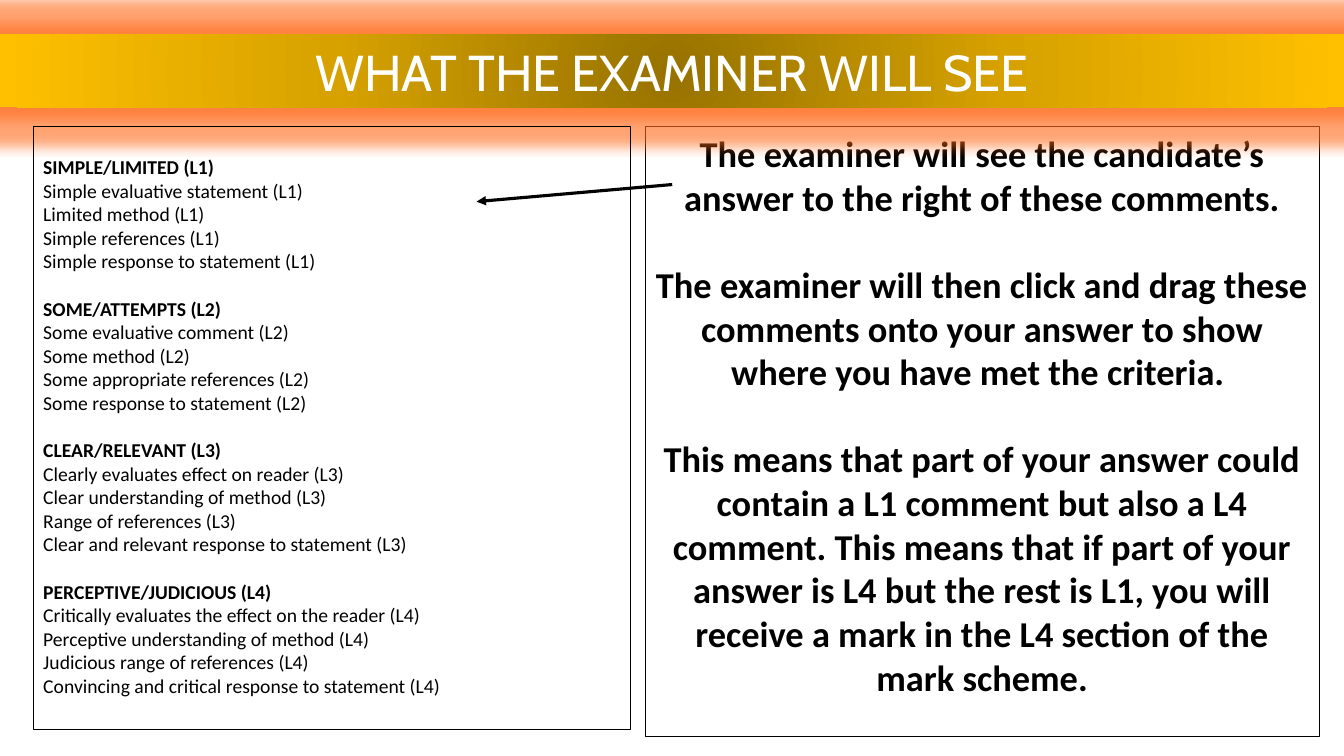
from dataclasses import dataclass

from pptx import Presentation
from pptx.dml.color import RGBColor
from pptx.enum.shapes import MSO_CONNECTOR, MSO_SHAPE
from pptx.enum.text import MSO_ANCHOR, PP_ALIGN
from pptx.oxml import parse_xml
from pptx.oxml.ns import nsdecls
from pptx.util import Cm, Pt

RECTANGLE = MSO_SHAPE.RECTANGLE
STRAIGHT = MSO_CONNECTOR.STRAIGHT
LEFT, CENTER = PP_ALIGN.LEFT, PP_ALIGN.CENTER
TOP, MIDDLE = MSO_ANCHOR.TOP, MSO_ANCHOR.MIDDLE

BLACK, WHITE = "000000", "FFFFFF"
GLOW = "FF6A1A"
BANNER_STOPS = ((0, "977200"), (50, "D7A200"), (100, "FFC000"))


@dataclass
class Line:
    text: str
    size: float
    font: str = "Calibri"
    color: str = BLACK
    bold: bool = False
    gap: float = 0


@dataclass
class Panel:
    left: float
    top: float
    width: float
    height: float
    lines: list[Line]
    align: PP_ALIGN
    anchor: MSO_ANCHOR = TOP
    inset_top: float = 0.13


@dataclass
class Level:
    heading: str
    code: str
    comments: list[str]


LEVELS = [
    Level("SIMPLE/LIMITED", "L1", [
        "Simple evaluative statement", "Limited method",
        "Simple references", "Simple response to statement"]),
    Level("SOME/ATTEMPTS", "L2", [
        "Some evaluative comment", "Some method",
        "Some appropriate references", "Some response to statement"]),
    Level("CLEAR/RELEVANT", "L3", [
        "Clearly evaluates effect on reader", "Clear understanding of method",
        "Range of references", "Clear and relevant response to statement"]),
    Level("PERCEPTIVE/JUDICIOUS", "L4", [
        "Critically evaluates the effect on the reader",
        "Perceptive understanding of method", "Judicious range of references",
        "Convincing and critical response to statement"]),
]

EXPLANATIONS = [
    "The examiner will see the candidate’s answer to the right of these comments.",
    "The examiner will then click and drag these comments onto your answer "
    "to show where you have met the criteria. ",
    "This means that part of your answer could contain a L1 comment but also "
    "a L4 comment. This means that if part of your answer is L4 but the rest "
    "is L1, you will receive a mark in the L4 section of the mark scheme.",
]


def rgb(color: str) -> RGBColor:
    return RGBColor.from_string(color)


def level_lines(level: Level, first: bool) -> list[Line]:
    heading = Line(f"{level.heading} ({level.code})", 14, bold=True,
                   gap=0 if first else 17)
    return [heading] + [Line(f"{comment} ({level.code})", 14)
                        for comment in level.comments]


def draw_panel(slide, panel: Panel):
    shape = slide.shapes.add_shape(
        RECTANGLE, Cm(panel.left), Cm(panel.top), Cm(panel.width), Cm(panel.height))
    shape.shadow.inherit = False
    shape.fill.background()
    shape.line.color.rgb = rgb(BLACK)
    shape.line.width = Pt(0.75)
    frame = shape.text_frame
    frame.word_wrap = True
    frame.vertical_anchor = panel.anchor
    frame.margin_top = Cm(panel.inset_top)
    frame.text = "\n".join(line.text for line in panel.lines)
    for paragraph, line in zip(frame.paragraphs, panel.lines):
        paragraph.alignment = panel.align
        paragraph.space_before = Pt(line.gap)
        font = paragraph.runs[0].font
        font.name, font.size, font.bold = line.font, Pt(line.size), line.bold
        font.color.rgb = rgb(line.color)
    return shape


def add_glowing_gradient(shape) -> None:
    stops = "".join(
        f'<a:gs pos="{position * 1000}"><a:srgbClr val="{color}"/></a:gs>'
        for position, color in BANNER_STOPS)
    gradient = parse_xml(
        f'<a:gradFill {nsdecls("a")} rotWithShape="1"><a:gsLst>{stops}</a:gsLst>'
        '<a:path path="circle"><a:fillToRect l="50000" t="50000" r="50000" '
        'b="50000"/></a:path></a:gradFill>')
    glow = parse_xml(
        f'<a:effectLst {nsdecls("a")}><a:glow rad="{Pt(18)}">'
        f'<a:srgbClr val="{GLOW}"><a:alpha val="60000"/></a:srgbClr>'
        '</a:glow></a:effectLst>')
    properties = shape.element.spPr
    for tag, part in (("a:noFill", gradient), ("a:effectLst", glow)):
        placeholder = properties.find(tag, properties.nsmap)
        properties.replace(placeholder, part)
    shape.line.fill.background()


def draw_arrow(slide, start: tuple[float, float], end: tuple[float, float]) -> None:
    arrow = slide.shapes.add_connector(
        STRAIGHT, *(Cm(value) for value in start + end))
    arrow.line.color.rgb = rgb(BLACK)
    arrow.line.width = Pt(2.25)
    arrow.line._get_or_add_ln().append(
        parse_xml(f'<a:tailEnd {nsdecls("a")} type="triangle"/>'))
    arrow.element.spPr.append(parse_xml(f'<a:effectLst {nsdecls("a")}/>'))


def main() -> None:
    deck = Presentation()
    deck.slide_width, deck.slide_height = Cm(33.87), Cm(19.05)
    slide = deck.slides.add_slide(deck.slide_layouts[6])

    # Explanation of how the comments are used
    explanation_lines = [Line(text, 26, bold=True, gap=31 if index else 0)
                         for index, text in enumerate(EXPLANATIONS)]
    draw_panel(slide, Panel(16.26, 3.18, 16.99, 15.39, explanation_lines, CENTER))
    draw_arrow(slide, (16.94, 4.65), (12.01, 5.08))

    # Title banner
    title = Line("WHAT THE EXAMINER WILL SEE", 36, "Cabin", WHITE)
    banner = draw_panel(
        slide, Panel(0, 0.86, 33.87, 1.85, [title], CENTER, MIDDLE))
    add_glowing_gradient(banner)

    # Comment bank by level
    comment_lines = [line for index, level in enumerate(LEVELS)
                     for line in level_lines(level, index == 0)]
    draw_panel(slide, Panel(0.84, 3.18, 15.04, 15.21, comment_lines, LEFT,
                            inset_top=0.73))

    deck.save("out.pptx")


if __name__ == "__main__":
    main()
